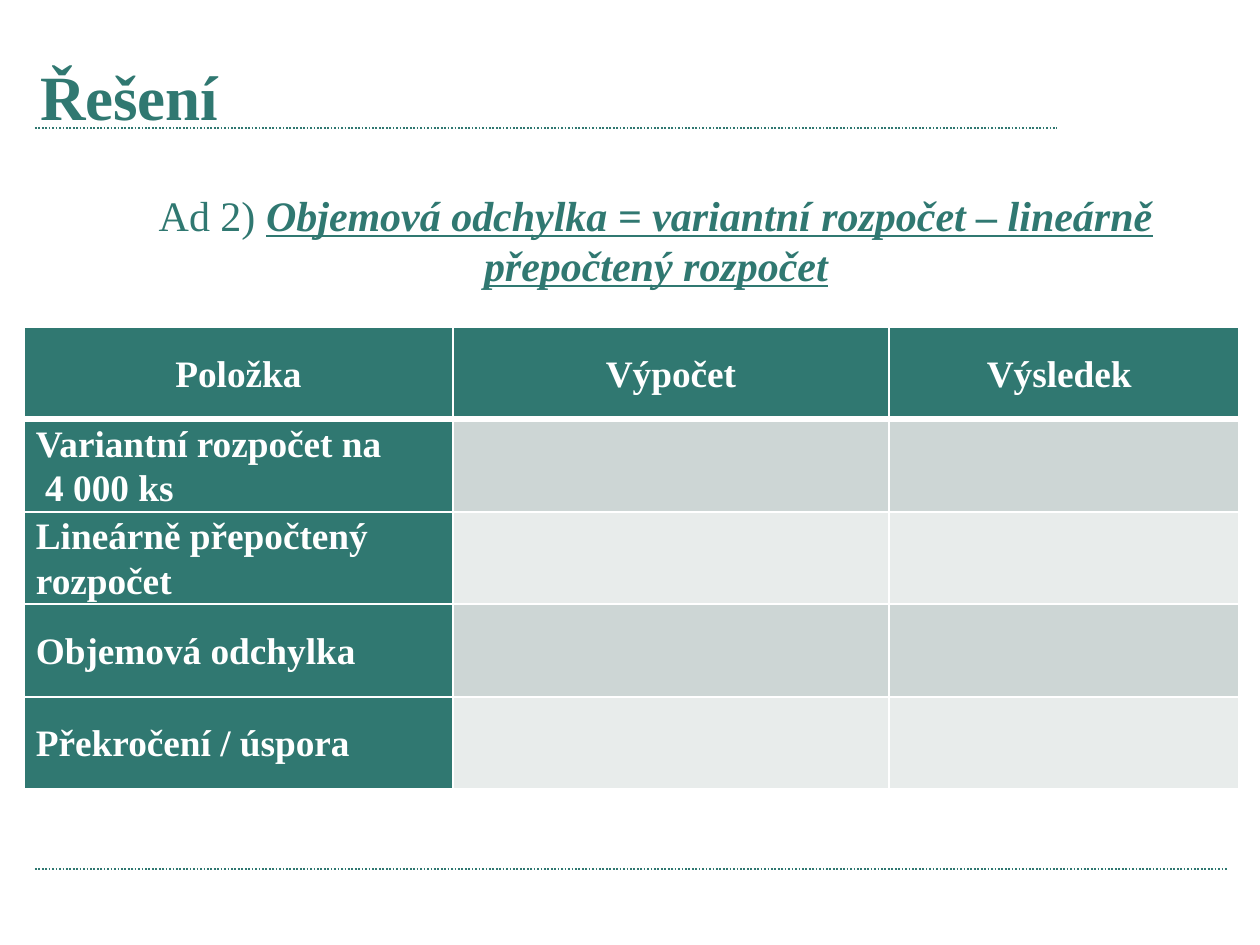
import lxml.etree
import pptx
import pptx.dml.color
import pptx.enum.dml
import pptx.enum.shapes
import pptx.enum.text
import pptx.oxml.ns
import pptx.util

PX = 914400 / 168
GREEN, WHITE = "307871", "FFFFFF"
BANDS = ["CDD6D5", "E8ECEB"]
FONT = "Times New Roman"
ALIGN = pptx.enum.text.PP_ALIGN
ANCHOR = pptx.enum.text.MSO_ANCHOR
qn = pptx.oxml.ns.qn

HEADERS = ["Položka", "Výpočet", "Výsledek "]
ITEMS = ["Variantní rozpočet na\n 4 000 ks", "Lineárně přepočtený rozpočet",
         "Objemová odchylka", "Překročení / úspora"]


def px(*lengths):
    return [pptx.util.Emu(round(length * PX)) for length in lengths]


def color(hex_value):
    return pptx.dml.color.RGBColor.from_string(hex_value)


def set_values(target, values):
    for name, value in values.items():
        setattr(target, name, value)


def format_font(font, size, hex_value, **values):
    set_values(font, {"name": FONT, "size": pptx.util.Pt(size), **values})
    font.color.rgb = color(hex_value)


def set_margins(target, left, top, right, bottom):
    names = ["margin_left", "margin_top", "margin_right", "margin_bottom"]
    set_values(target, dict(zip(names, px(left, top, right, bottom))))


def add_rule(slide, left, top, width):
    line = slide.shapes.add_connector(
        pptx.enum.shapes.MSO_CONNECTOR.STRAIGHT, *px(left, top, left + width, top))
    line.line.color.rgb = color(GREEN)
    set_values(line.line, {"width": pptx.util.Pt(0.75),
                           "dash_style": pptx.enum.dml.MSO_LINE.ROUND_DOT})
    properties = line._element.spPr
    lxml.etree.SubElement(properties, qn("a:effectLst"))


def place(shape, box):
    set_values(shape, dict(zip(["left", "top", "width", "height"], px(*box))))


def fill_title(slide, box):
    title = slide.shapes.title
    place(title, box)
    frame = title.text_frame
    set_values(frame, {"text": "Řešení", "word_wrap": True,
                       "vertical_anchor": ANCHOR.BOTTOM})
    set_margins(frame, 16, 8, 16, 15)
    paragraph = frame.paragraphs[0]
    paragraph.alignment = ALIGN.LEFT
    format_font(paragraph.runs[0].font, 27, GREEN, bold=True)


def add_formula(slide, box):
    frame = slide.shapes.add_textbox(*px(*box)).text_frame
    frame.word_wrap = True
    set_margins(frame, 17, 8, 17, 8)
    paragraph = frame.paragraphs[0]
    paragraph.alignment = ALIGN.CENTER
    parts = [("Ad 2) ", {}),
             ("Objemová odchylka = variantní rozpočet – lineárně přepočtený rozpočet",
              {"bold": True, "italic": True, "underline": True})]
    for text, style in parts:
        run = paragraph.add_run()
        run.text = text
        format_font(run.font, 18, GREEN, **style)


def set_borders(cell, widths):
    properties = cell._tc.get_or_add_tcPr()
    # Borders come before the fill in the cell properties
    for index, (side, width) in enumerate(widths.items()):
        border = lxml.etree.Element(qn(f"a:ln{side}"), w=str(pptx.util.Pt(width)))
        fill = lxml.etree.SubElement(border, qn("a:solidFill"))
        lxml.etree.SubElement(fill, qn("a:srgbClr"), val=WHITE)
        properties.insert(index, border)


def format_cell(cell, text, fill, alignment):
    cell.text = text
    cell.vertical_anchor = ANCHOR.MIDDLE
    set_margins(cell, 12, 0, 12, 0)
    cell.fill.solid()
    cell.fill.fore_color.rgb = color(fill)
    for paragraph in cell.text_frame.paragraphs:
        set_values(paragraph, {"alignment": alignment, "line_spacing": 1.07})
        format_font(paragraph.font, 16, WHITE, bold=True)


def add_variance_table(slide, box, column_widths):
    rows = [HEADERS] + [[item, "", ""] for item in ITEMS]
    table = slide.shapes.add_table(len(rows), len(HEADERS), *px(*box)).table
    for column, width in zip(table.columns, px(*column_widths)):
        column.width = width
    for row_index, texts in enumerate(rows):
        table.rows[row_index].height = px(box[3] / len(rows))[0]
        for column_index, text in enumerate(texts):
            cell = table.cell(row_index, column_index)
            is_label = row_index == 0 or column_index == 0
            fill = GREEN if is_label else BANDS[(row_index - 1) % 2]
            alignment = ALIGN.CENTER if row_index == 0 else ALIGN.LEFT
            format_cell(cell, text, fill, alignment)
            set_borders(cell, {"L": 1, "R": 1, "T": 3 if row_index == 1 else 1,
                               "B": 3 if row_index == 0 else 1})


def main():
    presentation = pptx.Presentation()
    presentation.slide_width, presentation.slide_height = px(1260, 945)
    slide = presentation.slides.add_slide(presentation.slide_layouts[5])
    # Dotted rules under the title and above the footer
    add_rule(slide, 35, 128, 1022)
    add_rule(slide, 35, 869, 1192)
    # Title, formula and table
    fill_title(slide, (24, 49, 1110, 99))
    add_variance_table(slide, (24, 327, 1215, 462), [429, 436, 350])
    add_formula(slide, (74, 181, 1164, 119))
    presentation.save("out.pptx")


if __name__ == "__main__":
    main()
